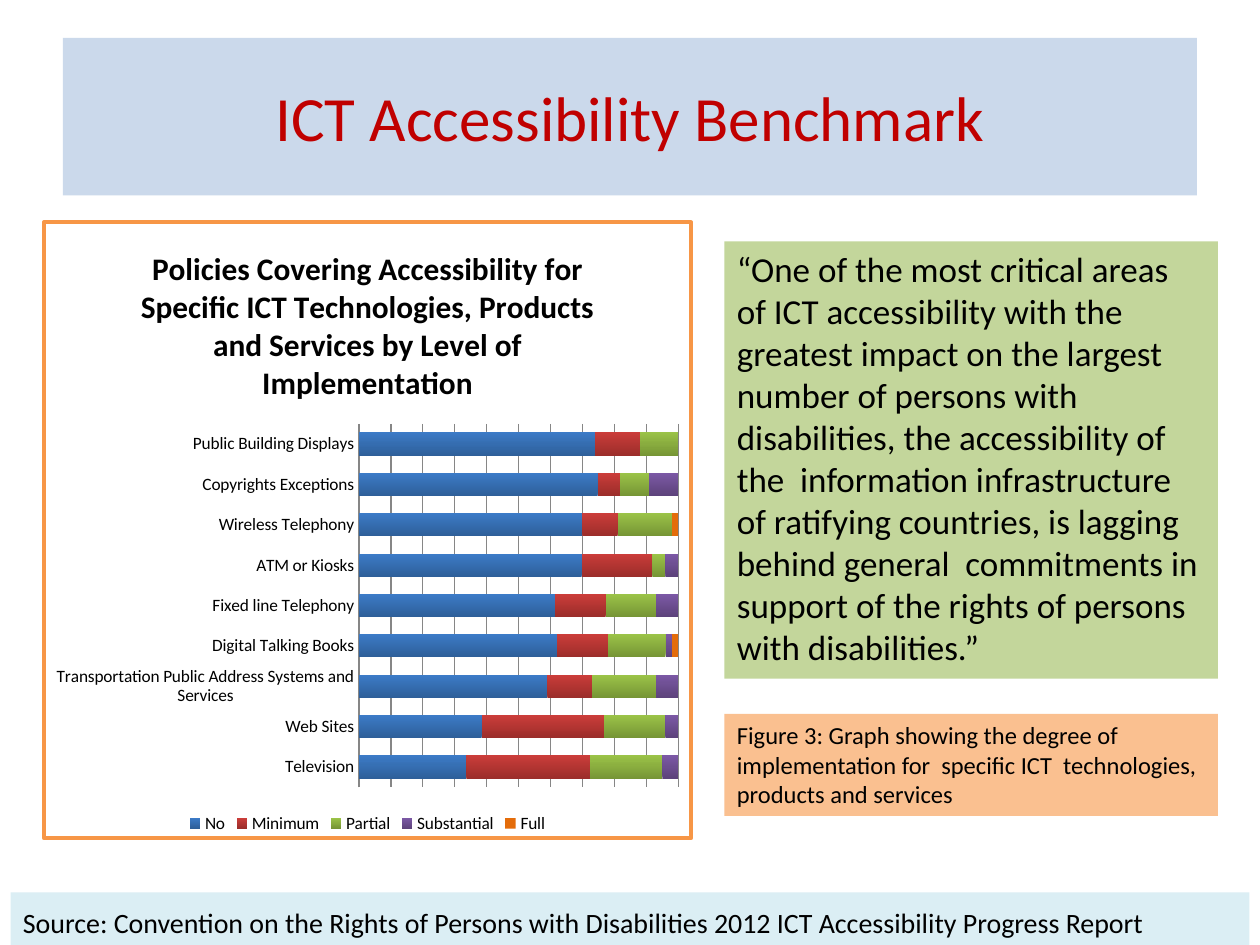
from dataclasses import dataclass

from lxml import etree
from pptx import Presentation
from pptx.chart.data import CategoryChartData
from pptx.dml.color import RGBColor
from pptx.enum.chart import XL_CHART_TYPE, XL_LEGEND_POSITION, XL_TICK_MARK
from pptx.enum.shapes import MSO_SHAPE
from pptx.enum.text import MSO_ANCHOR, PP_ALIGN
from pptx.util import Pt

RECTANGLE = MSO_SHAPE.RECTANGLE
STACKED_100 = XL_CHART_TYPE.BAR_STACKED_100
LEGEND_BOTTOM = XL_LEGEND_POSITION.BOTTOM
NO_TICKS = XL_TICK_MARK.NONE
TOP, MIDDLE = MSO_ANCHOR.TOP, MSO_ANCHOR.MIDDLE
LEFT, CENTER = PP_ALIGN.LEFT, PP_ALIGN.CENTER


@dataclass(frozen=True)
class Theme:
    font: str = "Calibri"
    ink: str = "000000"
    heading_ink: str = "C00000"
    heading_fill: str = "CBD9EB"
    quote_fill: str = "C3D69B"
    caption_fill: str = "FAC090"
    source_fill: str = "DBEEF4"
    chart_fill: str = "FFFFFF"
    chart_border: str = "F79646"
    grid: str = "868686"
    heading_size: int = 36
    quote_size: int = 20
    chart_title_size: int = 18
    source_size: int = 16
    caption_size: int = 14
    chart_size: int = 10


THEME = Theme()

CHART_TITLE = ("Policies Covering Accessibility for Specific ICT Technologies, "
               "Products and Services by Level of Implementation")
TECHNOLOGIES = ["Television", "Web Sites",
                "Transportation Public Address Systems and Services",
                "Digital Talking Books", "Fixed line Telephony", "ATM or Kiosks",
                "Wireless Telephony", "Copyrights Exceptions",
                "Public Building Displays"]
# Level, values, dark and light end of the bar's shading
LEVELS = [
    ("No", (34, 38, 59, 62, 62, 69, 70, 74, 74), "2E5F99", "3C7BC7"),
    ("Minimum", (39, 38, 14, 16, 16, 22, 11, 7, 14), "9B2D2A", "CB3D3A"),
    ("Partial", (23, 19, 20, 18, 16, 4, 17, 9, 12), "769535", "9BC348"),
    ("Substantial", (5, 4, 7, 2, 7, 4, 0, 9, 0), "5D437B", "7B58A5"),
    ("Full", (0, 0, 0, 2, 0, 0, 2, 0, 0), "E46C0A", "E46C0A"),
]


def rgb(value):
    return RGBColor.from_string(value)


def style_font(font, size, color=THEME.ink, bold=False):
    font.name, font.size, font.bold = THEME.font, Pt(size), bold
    font.color.rgb = rgb(color)


def add_panel(slide, box, text, fill, size, color=THEME.ink,
              anchor=TOP, align=LEFT, line_spacing=1.0):
    panel = slide.shapes.add_shape(RECTANGLE, *map(Pt, box))
    panel.shadow.inherit = False
    panel.fill.solid()
    panel.fill.fore_color.rgb = rgb(fill)
    panel.line.fill.background()
    frame = panel.text_frame
    frame.word_wrap = True
    frame.vertical_anchor = anchor
    paragraph = frame.paragraphs[0]
    paragraph.alignment = align
    paragraph.line_spacing = line_spacing
    run = paragraph.add_run()
    run.text = text
    style_font(run.font, size, color)


def frame_chart(chart, fill, border, width):
    """Give the chart area a fill and a border."""
    chart_ns = "http://schemas.openxmlformats.org/drawingml/2006/chart"
    draw_ns = "http://schemas.openxmlformats.org/drawingml/2006/main"
    area = etree.fromstring(
        f'<c:spPr xmlns:c="{chart_ns}" xmlns:a="{draw_ns}">'
        f'<a:solidFill><a:srgbClr val="{fill}"/></a:solidFill>'
        f'<a:ln w="{Pt(width)}"><a:solidFill><a:srgbClr val="{border}"/>'
        '</a:solidFill></a:ln></c:spPr>')
    chart.font._element.getroottree().getroot().find(
        f"{{{chart_ns}}}txPr").addprevious(area)


def add_policy_chart(slide, box):
    data = CategoryChartData(number_format="0")
    data.categories = TECHNOLOGIES
    for level, values, _, _ in LEVELS:
        data.add_series(level, values)
    chart = slide.shapes.add_chart(STACKED_100, *map(Pt, box), data).chart
    style_font(chart.font, THEME.chart_size)
    frame_chart(chart, THEME.chart_fill, THEME.chart_border, 2)

    # Title and legend
    chart.has_title = True
    title = chart.chart_title.text_frame.paragraphs[0].add_run()
    title.text = CHART_TITLE
    style_font(title.font, THEME.chart_title_size, bold=True)
    chart.chart_title.include_in_layout = False
    chart.has_legend = True
    chart.legend.position = LEGEND_BOTTOM
    chart.legend.include_in_layout = False

    # Axes
    chart.category_axis.major_tick_mark = NO_TICKS
    chart.category_axis.format.line.color.rgb = rgb(THEME.grid)
    shares = chart.value_axis
    shares.visible = False
    shares.minimum_scale, shares.maximum_scale = 0, 1
    shares.major_unit = 0.1
    shares.tick_labels.number_format = "0.00%"
    shares.tick_labels.number_format_is_linked = False
    shares.has_major_gridlines = True
    shares.major_gridlines.format.line.color.rgb = rgb(THEME.grid)

    # Bars, shaded from dark at the bottom to light at the top
    plot = chart.plots[0]
    plot.vary_by_categories = False
    plot.gap_width, plot.overlap = 75, 100
    for series, (_, _, dark, light) in zip(plot.series, LEVELS):
        fill = series.format.fill
        if dark == light:
            fill.solid()
            fill.fore_color.rgb = rgb(dark)
            continue
        fill.gradient()
        fill.gradient_angle = 90
        for stop, shade in zip(fill.gradient_stops, (dark, light)):
            stop.color.rgb = rgb(shade)


def add_commentary(slide, box):
    """Quote above, figure caption below, in one column."""
    left, top, width, height = box
    quote_height, caption_height = 249.8, 58.3
    add_panel(slide, (left, top, width, quote_height),
              "“One of the most critical areas of ICT accessibility with the "
              "greatest impact on the largest number of persons with "
              "disabilities, the accessibility of the  information "
              "infrastructure of ratifying countries, is lagging behind "
              "general  commitments in support of the rights of persons with "
              "disabilities.”", THEME.quote_fill, THEME.quote_size)
    add_panel(slide, (left, top + height - caption_height, width, caption_height),
              "Figure 3: Graph showing the degree of implementation for  "
              "specific ICT  technologies, products and services",
              THEME.caption_fill, THEME.caption_size)


def main():
    deck = Presentation()
    deck.slide_width, deck.slide_height = Pt(720), Pt(540)
    slide = deck.slides.add_slide(deck.slide_layouts[6])

    # Heading
    add_panel(slide, (36, 21.6, 648, 90), "ICT Accessibility Benchmark",
              THEME.heading_fill, THEME.heading_size, THEME.heading_ink,
              MIDDLE, CENTER)
    # Source line
    add_panel(slide, (6, 510, 708, 30),
              "Source: Convention on the Rights of Persons with Disabilities "
              "2012 ICT Accessibility Progress Report",
              THEME.source_fill, THEME.source_size, line_spacing=1.2)
    # Body
    add_commentary(slide, (414, 138, 282, 328.3))
    add_policy_chart(slide, (24, 126, 372, 354))

    deck.save("out.pptx")


if __name__ == "__main__":
    main()
